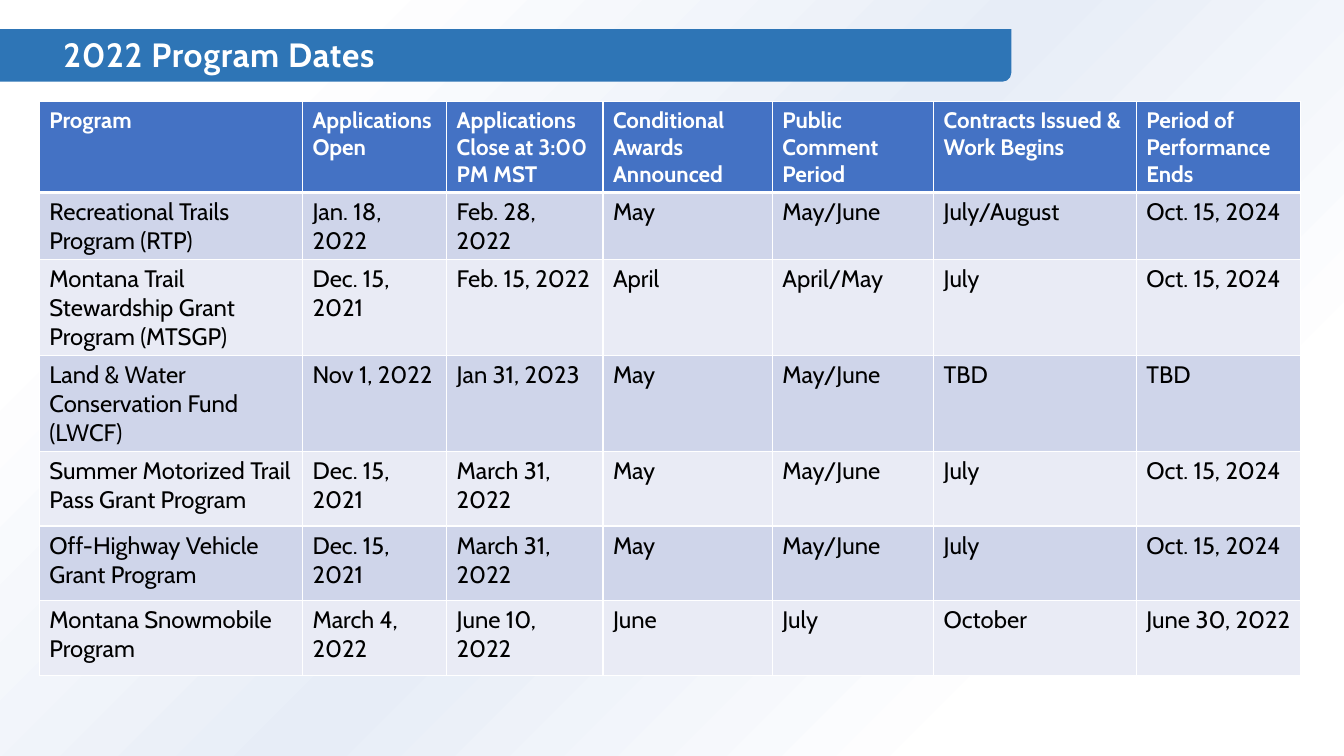
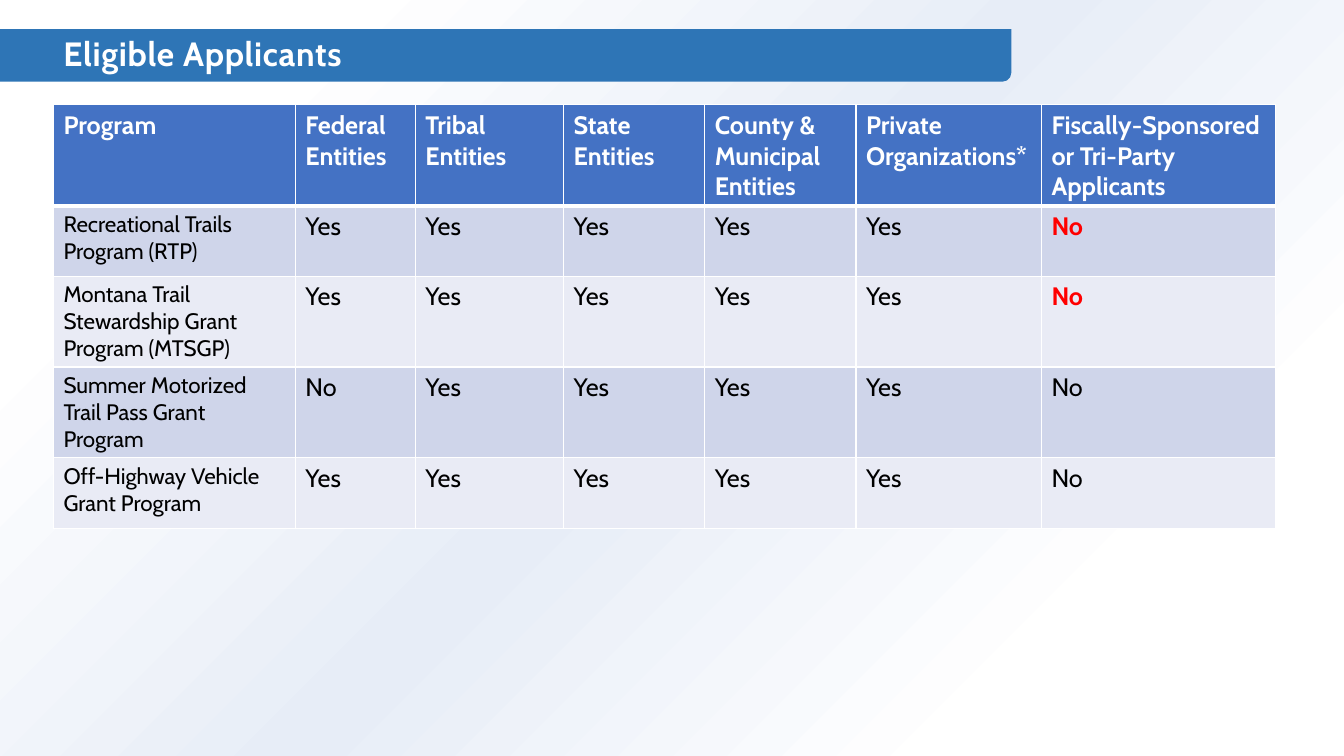
from dataclasses import dataclass

from lxml import etree
from copy import deepcopy
from pptx import Presentation
from pptx.dml.color import RGBColor
from pptx.enum.shapes import MSO_SHAPE
from pptx.enum.text import MSO_ANCHOR
from pptx.oxml.ns import qn
from pptx.slide import Slide
from pptx.table import _Cell
from pptx.text.text import TextFrame
from pptx.util import Inches, Pt

RECT = MSO_SHAPE.RECTANGLE
BAND = MSO_SHAPE.ROUND_2_DIAG_RECTANGLE
MIDDLE = MSO_ANCHOR.MIDDLE

FONT = "Cabin"
COLORS = {
    "white": "FFFFFF",
    "black": "000000",
    "haze": "E7EDF7",
    "band": "2E75B6",
    "head": "4472C4",
    "odd": "CFD5EA",
    "even": "E9EBF5",
    "alert": "FF0000",
}
GLOW = [(0.19, "white"), (0.5, "haze"), (0.83, "white")]


@dataclass
class Grid:
    title: str
    title_top: float
    left: float
    top: float
    cols: list[float]
    rows: list[float]
    sizes: tuple[float, float, float]  # header, first column, other cells
    data: list[list[str]]
    alerts: tuple[tuple[int, int], ...] = ()


def rgb(name: str) -> RGBColor:
    return RGBColor.from_string(COLORS[name])


def put_text(frame: TextFrame, text: str, size: float, color: str = "black",
             bold: bool = False, track: int = 0, line: float = 1.0) -> None:
    frame.word_wrap = True
    frame.text = text
    for para in frame.paragraphs:
        para.line_spacing = line
        for run in para.runs:
            font = run.font
            font.name, font.size, font.bold = FONT, Pt(size), bold
            font.color.rgb = rgb(color)
            if track:
                run._r.get_or_add_rPr().set("spc", str(track))


def add_back(slide: Slide) -> None:
    # Diagonal glow over the whole slide
    back = slide.shapes.add_shape(RECT, 0, Inches(-0.04), Inches(13.33), Inches(7.54))
    back.shadow.inherit = False
    back.line.fill.background()
    back.fill.gradient()
    back.fill.gradient_angle = 135
    stops = back._element.spPr.find(".//" + qn("a:gsLst"))
    stops.append(deepcopy(stops[0]))
    for stop, (place, color) in zip(back.fill.gradient_stops, GLOW):
        stop.position = place
        stop.color.rgb = rgb(color)


def add_title(slide: Slide, text: str, top: float) -> None:
    band = slide.shapes.add_shape(BAND, Inches(-0.19), Inches(0.29),
                                  Inches(10.22), Inches(0.52))
    band.shadow.inherit = False
    band.line.fill.background()
    band.fill.solid()
    band.fill.fore_color.rgb = rgb("band")
    box = slide.shapes.add_textbox(Inches(0.53), Inches(top), Inches(12.28), Inches(0.47))
    box.text_frame.vertical_anchor = MIDDLE
    put_text(box.text_frame, text, 24, color="white", bold=True, track=50, line=0.9)


def set_edges(cell: _Cell, row: int) -> None:
    # White rules, thicker between the header and the body
    widths = {"L": 1, "R": 1, "T": 3 if row == 1 else 1, "B": 3 if row == 0 else 1}
    props = cell._tc.get_or_add_tcPr()
    for side, width in widths.items():
        edge = etree.SubElement(props, qn(f"a:ln{side}"), w=str(Pt(width)))
        fill = etree.SubElement(edge, qn("a:solidFill"))
        etree.SubElement(fill, qn("a:srgbClr"), val=COLORS["white"])


def add_grid(slide: Slide, grid: Grid) -> None:
    table = slide.shapes.add_table(
        len(grid.rows), len(grid.cols), Inches(grid.left), Inches(grid.top),
        Inches(sum(grid.cols)), Inches(sum(grid.rows))).table
    for col, width in zip(table.columns, grid.cols):
        col.width = Inches(width)
    for row, height in zip(table.rows, grid.rows):
        row.height = Inches(height)
    head_size, first_size, cell_size = grid.sizes
    for r, line in enumerate(grid.data):
        for c, text in enumerate(line):
            cell = table.cell(r, c)
            set_edges(cell, r)
            cell.fill.solid()
            if r == 0:
                shade, size, color = "head", head_size, "white"
            else:
                shade = "odd" if r % 2 else "even"
                size = cell_size if c else first_size
                color = "alert" if (r, c) in grid.alerts else "black"
            cell.fill.fore_color.rgb = rgb(shade)
            put_text(cell.text_frame, text, size, color=color, bold=color != "black")


RTP = "Recreational Trails Program (RTP)"
MTSGP = "Montana Trail Stewardship Grant Program (MTSGP)"
SUMMER = "Summer Motorized Trail Pass Grant Program"
OFF_ROAD = "Off-Highway Vehicle Grant Program"
END = "Oct. 15, 2024"

DATES = Grid(
    title="2022 Program Dates", title_top=0.33, left=0.39, top=1.01,
    cols=[2.61, 1.43, 1.55, 1.68, 1.6, 2.01, 1.63],
    rows=[0.62] * 2 + [0.74] * 5,
    sizes=(16, 17, 17),
    data=[
        ["Program", "Applications Open", "Applications Close at 3:00 PM MST",
         "Conditional Awards Announced", "Public Comment Period",
         "Contracts Issued & Work Begins", "Period of Performance Ends"],
        [RTP, "Jan. 18, 2022", "Feb. 28, 2022", "May", "May/June", "July/August", END],
        [MTSGP, "Dec. 15, 2021", "Feb. 15, 2022", "April", "April/May", "July", END],
        ["Land & Water Conservation Fund (LWCF)", "Nov 1, 2022", "Jan 31, 2023",
         "May", "May/June", "TBD", "TBD"],
        [SUMMER, "Dec. 15, 2021", "March 31, 2022", "May", "May/June", "July", END],
        [OFF_ROAD, "Dec. 15, 2021", "March 31, 2022", "May", "May/June", "July", END],
        ["Montana Snowmobile Program", "March 4, 2022", "June 10, 2022", "June",
         "July", "October", "June 30, 2022"],
    ],
)

GROUPS = Grid(
    title="Eligible Applicants", title_top=0.32, left=0.53, top=1.04,
    cols=[2.4, 1.19, 1.47, 1.4, 1.5, 1.84, 2.32],
    rows=[0.45] + [0.7] * 4,
    sizes=(18, 16, 18),
    data=[
        ["Program", "Federal Entities", "Tribal Entities", "State Entities",
         "County &\nMunicipal Entities", "Private Organizations*",
         "Fiscally-Sponsored or Tri-Party Applicants"],
        [RTP, *["Yes"] * 5, "No"],
        [MTSGP, *["Yes"] * 5, "No"],
        [SUMMER, "No", *["Yes"] * 4, "No"],
        [OFF_ROAD, *["Yes"] * 5, "No"],
    ],
    alerts=((1, 6), (2, 6)),
)


def main() -> None:
    deck = Presentation()
    deck.slide_width, deck.slide_height = Inches(13.33), Inches(7.5)
    for grid in (DATES, GROUPS):
        slide = deck.slides.add_slide(deck.slide_layouts[6])
        add_back(slide)
        add_title(slide, grid.title, grid.title_top)
        add_grid(slide, grid)
    deck.save("out.pptx")


if __name__ == "__main__":
    main()
